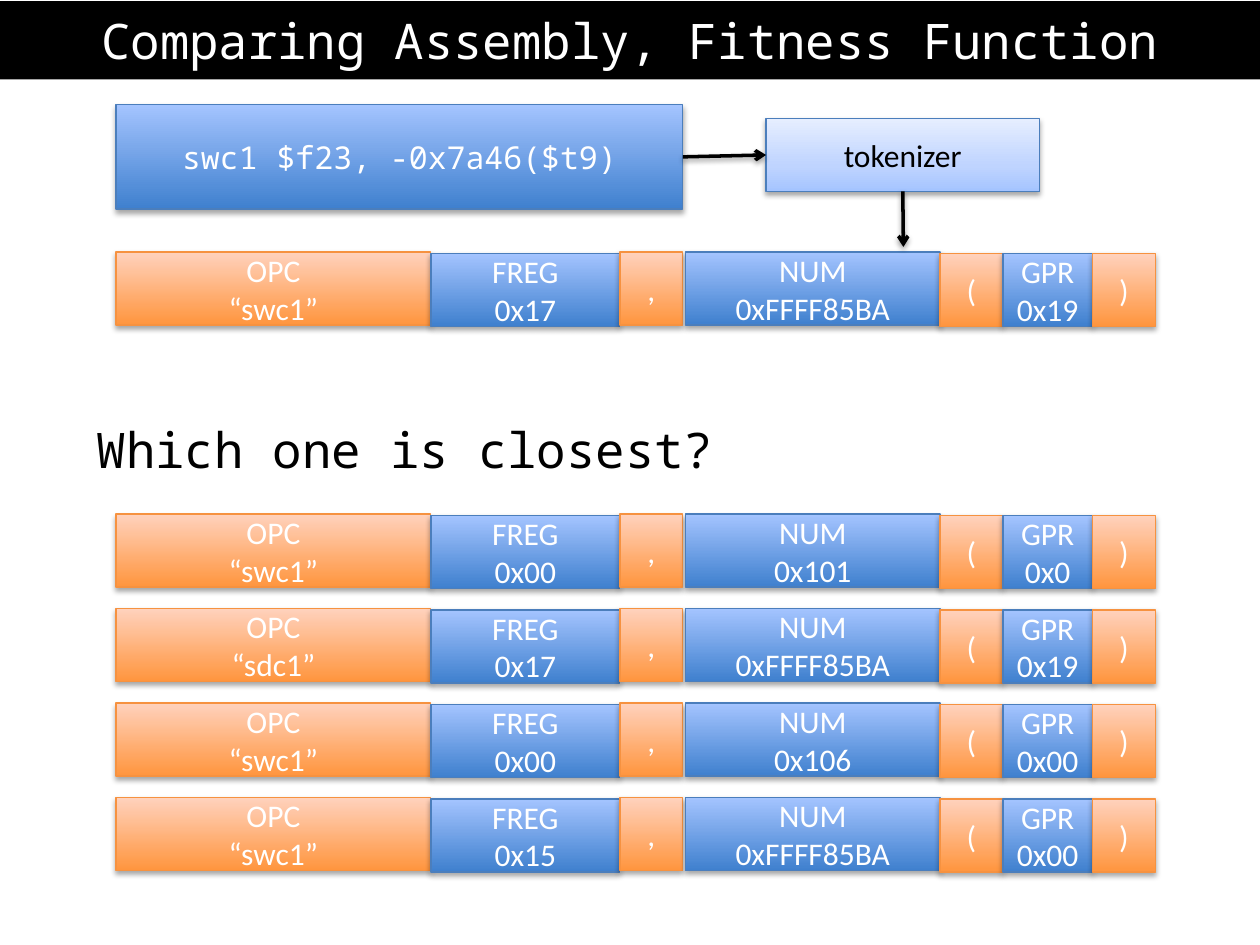
from copy import deepcopy

from pptx import Presentation
from pptx.dml.color import RGBColor
from pptx.enum.shapes import MSO_CONNECTOR, MSO_SHAPE
from pptx.enum.text import MSO_ANCHOR, PP_ALIGN
from pptx.oxml import parse_xml
from pptx.oxml.ns import nsdecls
from pptx.util import Inches, Pt

BLACK = RGBColor(0x00, 0x00, 0x00)
WHITE = RGBColor(0xFF, 0xFF, 0xFF)
BLUE_LINE = RGBColor(0x4B, 0x7E, 0xBC)
ORANGE_LINE = RGBColor(0xF6, 0x92, 0x40)
BLUE_DARK = RGBColor(0x3F, 0x80, 0xCE)
BLUE_LIGHT = RGBColor(0xA4, 0xC4, 0xFF)
BLUE_SOFT = RGBColor(0xBF, 0xD4, 0xFF)
BLUE_PALE = RGBColor(0xE6, 0xEE, 0xFF)
ORANGE_DARK = RGBColor(0xFF, 0x95, 0x3E)
ORANGE_PALE = RGBColor(0xFF, 0xD2, 0xBD)

SANS = {"name": "Calibri", "size": Pt(18)}
MONO = {"name": "Noto Sans Mono", "size": Pt(18)}
HEADING = {"name": "Noto Sans Mono", "size": Pt(28)}

BLUE = {"stops": [(0, BLUE_DARK), (1, BLUE_LIGHT)], "line": BLUE_LINE, "text": WHITE}
ORANGE = {"stops": [(0, ORANGE_DARK), (1, ORANGE_PALE)], "line": ORANGE_LINE, "text": WHITE}
PALE = {"stops": [(0, BLUE_LIGHT), (0.35, BLUE_SOFT), (1, BLUE_PALE)],
        "line": BLUE_LINE, "text": BLACK}

TOKEN_COLUMNS = [
    (0, 0, 2.5, ORANGE),
    (2.5, 0.01, 1.5, BLUE),
    (4, 0, 0.5, ORANGE),
    (4.52, 0, 2.02, BLUE),
    (6.54, 0.01, 0.5, ORANGE),
    (7.04, 0.01, 0.71, BLUE),
    (7.75, 0.01, 0.5, ORANGE),
]
TARGET = ("swc1", "0x17", "0xFFFF85BA", "0x19")
CANDIDATES = [
    ("swc1", "0x00", "0x101", "0x0"),
    ("sdc1", "0x17", "0xFFFF85BA", "0x19"),
    ("swc1", "0x00", "0x106", "0x00"),
    ("swc1", "0x15", "0xFFFF85BA", "0x00"),
]
ROW_LEFT = 0.92
ROW_HEIGHT = 0.58
ROW_PITCH = 0.75


def write_text(shape, text, font, color, align):
    """Put one styled paragraph into a shape."""
    frame = shape.text_frame
    frame.word_wrap = True
    frame.text = text
    paragraph = frame.paragraphs[0]
    paragraph.alignment = align
    for run in paragraph.runs:
        for name, value in font.items():
            setattr(run.font, name, value)
        run.font.color.rgb = color


def add_shadow(shape, alpha, distance):
    """Give a shape or connector a soft shadow below it."""
    shape._element.spPr.append(parse_xml(
        f'<a:effectLst {nsdecls("a")}><a:outerShdw blurRad="40000" dist="{distance}" '
        f'dir="5400000" rotWithShape="0"><a:srgbClr val="000000">'
        f'<a:alpha val="{alpha}"/></a:srgbClr></a:outerShdw></a:effectLst>'))


def fill_gradient(shape, stops):
    """Fill a shape with a gradient that rises from its bottom edge."""
    shape.fill.gradient()
    shape.fill.gradient_angle = 90
    stop_list = shape._element.spPr.find(".//{*}gsLst")
    for _ in stops[2:]:
        stop_list.append(deepcopy(stop_list[0]))
    for stop, (position, color) in zip(shape.fill.gradient_stops, stops):
        stop.position = position
        stop.color.rgb = color


def add_box(slide, left, top, width, height, text, style, font=SANS):
    """Add a shaded, outlined box with centred text."""
    shape = slide.shapes.add_shape(MSO_SHAPE.RECTANGLE, Inches(left), Inches(top),
                                   Inches(width), Inches(height))
    fill_gradient(shape, style["stops"])
    shape.line.color.rgb = style["line"]
    shape.line.width = Pt(0.75)
    add_shadow(shape, 35000, 23000)
    shape.text_frame.vertical_anchor = MSO_ANCHOR.MIDDLE
    write_text(shape, text, font, style["text"], PP_ALIGN.CENTER)
    return shape


def add_arrow(slide, start, side, end_x, end_y):
    """Add an arrow from the middle of a box side to a point."""
    arrow = slide.shapes.add_connector(MSO_CONNECTOR.STRAIGHT, 0, 0,
                                       Inches(end_x), Inches(end_y))
    arrow.begin_connect(start, side)
    arrow.line.color.rgb = BLACK
    arrow.line.width = Pt(2)
    arrow.line._get_or_add_ln().append(parse_xml(f'<a:tailEnd {nsdecls("a")} type="arrow"/>'))
    add_shadow(arrow, 38000, 20000)
    return arrow


def add_title(slide, left, top, width, height):
    """Add the black title band."""
    band = slide.shapes.add_shape(MSO_SHAPE.RECTANGLE, Inches(left), Inches(top),
                                  Inches(width), Inches(height))
    band.shadow.inherit = False
    band.fill.solid()
    band.fill.fore_color.rgb = BLACK
    band.line.fill.background()
    band.text_frame.vertical_anchor = MSO_ANCHOR.MIDDLE
    write_text(band, "Comparing Assembly, Fitness Function", HEADING, WHITE, PP_ALIGN.CENTER)


def add_question(slide, left, top, width, height):
    """Add the question above the candidate rows."""
    box = slide.shapes.add_textbox(Inches(left), Inches(top), Inches(width), Inches(height))
    write_text(box, "Which one is closest?", HEADING, BLACK, PP_ALIGN.LEFT)


def add_token_row(slide, left, top, height, values):
    """Add one row of instruction tokens."""
    opcode, register, number, base = values
    labels = [f"OPC\v“{opcode}”", f"FREG\v{register}", ",", f"NUM\v{number}",
              "(", f"GPR\v{base}", ")"]
    for label, (offset, drop, width, style) in zip(labels, TOKEN_COLUMNS):
        add_box(slide, left + offset, top + drop, width, height, label, style)


def add_tokenizer_flow(slide, left, top):
    """Add the instruction, the tokenizer and the arrows between them."""
    instruction = add_box(slide, left, top, 4.5, 0.83, "swc1 $f23, -0x7a46($t9)", BLUE, MONO)
    tokenizer = add_box(slide, left + 5.16, top + 0.11, 2.17, 0.58, "tokenizer", PALE)
    add_arrow(slide, instruction, 3, left + 5.16, top + 0.4).end_connect(tokenizer, 1)
    add_arrow(slide, tokenizer, 2, left + 6.25, top + 1.13)


def main():
    """Build the slide and save it."""
    presentation = Presentation()
    presentation.slide_width = Inches(10)
    presentation.slide_height = Inches(7.5)
    slide = presentation.slides.add_slide(presentation.slide_layouts[6])
    add_title(slide, 0, 0.01, 10, 0.62)
    add_token_row(slide, ROW_LEFT, 2, ROW_HEIGHT, TARGET)
    add_tokenizer_flow(slide, ROW_LEFT, 0.83)
    add_question(slide, 0.67, 3.28, 8.5, 0.57)
    for index, candidate in enumerate(CANDIDATES):
        add_token_row(slide, ROW_LEFT, 4.08 + index * ROW_PITCH, ROW_HEIGHT, candidate)
    presentation.save("out.pptx")


if __name__ == "__main__":
    main()
